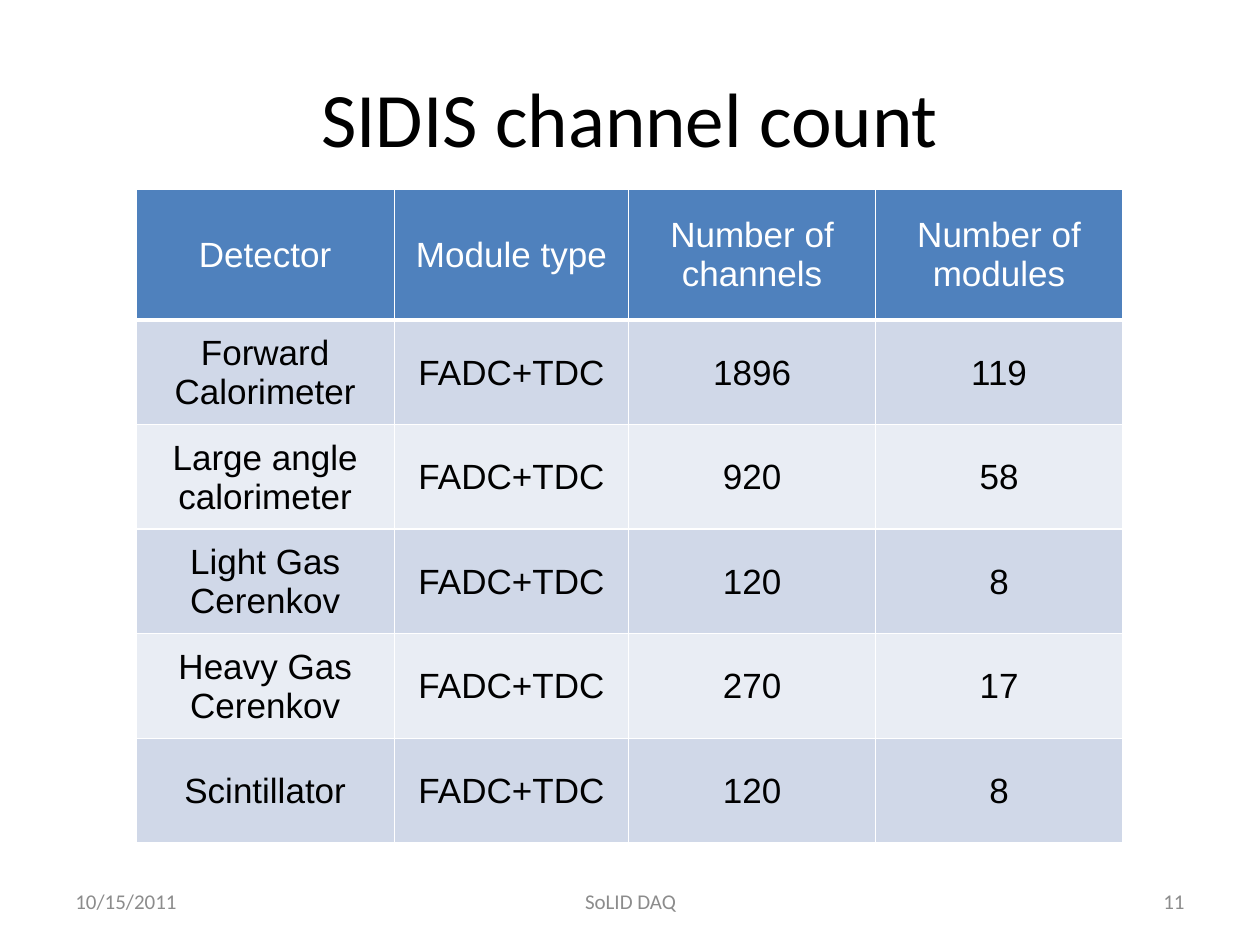
"""Build the SIDIS channel count slide."""
from dataclasses import dataclass

from lxml.etree import SubElement
from pptx import Presentation
from pptx.dml.color import RGBColor
from pptx.enum.text import MSO_ANCHOR as Anchor, PP_ALIGN as Align
from pptx.oxml.ns import qn
from pptx.util import Inches, Pt

TITLE = "SIDIS channel count"
HEADER = ["Detector", "Module type", "Number of channels", "Number of modules"]
MODULE = "FADC+TDC"
DETECTORS = [
    ("Forward Calorimeter", 1896, 119),
    ("Large angle calorimeter", 920, 58),
    ("Light Gas Cerenkov", 120, 8),
    ("Heavy Gas Cerenkov", 270, 17),
    ("Scintillator", 120, 8),
]
FOOTERS = [
    ("10/15/2011", 0.5, 2.33, Align.LEFT),
    ("SoLID DAQ", 3.42, 3.17, Align.CENTER),
    ("11", 7.17, 2.33, Align.RIGHT),
]
COL_WIDTHS = [2.05, 1.86, 1.96, 1.96]
HEADER_HEIGHT, ROW_HEIGHT = 1.04, 0.83


@dataclass(frozen=True)
class Theme:
    heading: str = "Calibri"
    body: str = "Arial"
    black: str = "000000"
    white: str = "FFFFFF"
    grey: str = "8C8C8C"
    header: str = "4F81BD"
    bands: tuple = ("D0D8E8", "E9EDF4")
    title_size: int = 44
    table_size: int = 20
    footer_size: int = 12
    rule: int = 1
    header_rule: int = 3


T = Theme()


def write(tf, text, *, size, font, color, align=Align.CENTER):
    tf.word_wrap = True
    p = tf.paragraphs[0]
    p.alignment = align
    r = p.add_run()
    r.text = text
    r.font.size = Pt(size)
    r.font.name = font
    r.font.bold = False
    r.font.color.rgb = RGBColor.from_string(color)


def set_borders(cell, top, bottom):
    tc_pr = cell._tc.get_or_add_tcPr()
    widths = {"a:lnL": T.rule, "a:lnR": T.rule, "a:lnT": top, "a:lnB": bottom}
    for tag, width in widths.items():
        ln = SubElement(tc_pr, qn(tag), w=str(Pt(width)))
        SubElement(SubElement(ln, qn("a:solidFill")), qn("a:srgbClr"), val=T.white)


def add_title(s):
    sp = s.shapes.title
    sp.left, sp.top, sp.width, sp.height = map(Inches, (0.5, 0.3, 9, 1.25))
    sp.text_frame.vertical_anchor = Anchor.MIDDLE
    write(sp.text_frame, TITLE, size=T.title_size, font=T.heading, color=T.black)


def add_channel_table(s):
    rows = [HEADER] + [(name, MODULE, *map(str, counts)) for name, *counts in DETECTORS]
    heights = [HEADER_HEIGHT] + [ROW_HEIGHT] * len(DETECTORS)
    box = map(Inches, (1.08, 1.5, sum(COL_WIDTHS), sum(heights)))
    table = s.shapes.add_table(len(rows), len(HEADER), *box).table
    for col, width in zip(table.columns, COL_WIDTHS):
        col.width = Inches(width)
    for i, (values, height) in enumerate(zip(rows, heights)):
        table.rows[i].height = Inches(height)
        fill = T.bands[(i - 1) % 2] if i else T.header
        top = T.header_rule if i == 1 else T.rule
        bottom = T.rule if i else T.header_rule
        for j, text in enumerate(values):
            cell = table.cell(i, j)
            set_borders(cell, top, bottom)
            cell.fill.solid()
            cell.fill.fore_color.rgb = RGBColor.from_string(fill)
            cell.vertical_anchor = Anchor.MIDDLE
            cell.margin_left = cell.margin_right = cell.margin_top = Inches(0.01)
            cell.margin_bottom = 0
            write(cell.text_frame, text, size=T.table_size, font=T.body,
                  color=T.black if i else T.white)


def add_footers(s):
    for text, left, width, align in FOOTERS:
        sp = s.shapes.add_textbox(*map(Inches, (left, 6.95, width, 0.4)))
        sp.text_frame.vertical_anchor = Anchor.MIDDLE
        write(sp.text_frame, text, size=T.footer_size, font=T.heading,
              color=T.grey, align=align)


def main():
    prs = Presentation()
    prs.slide_width, prs.slide_height = Inches(10), Inches(7.5)
    s = prs.slides.add_slide(prs.slide_layouts[5])
    add_title(s)
    add_channel_table(s)
    add_footers(s)
    prs.save("out.pptx")


if __name__ == "__main__":
    main()
